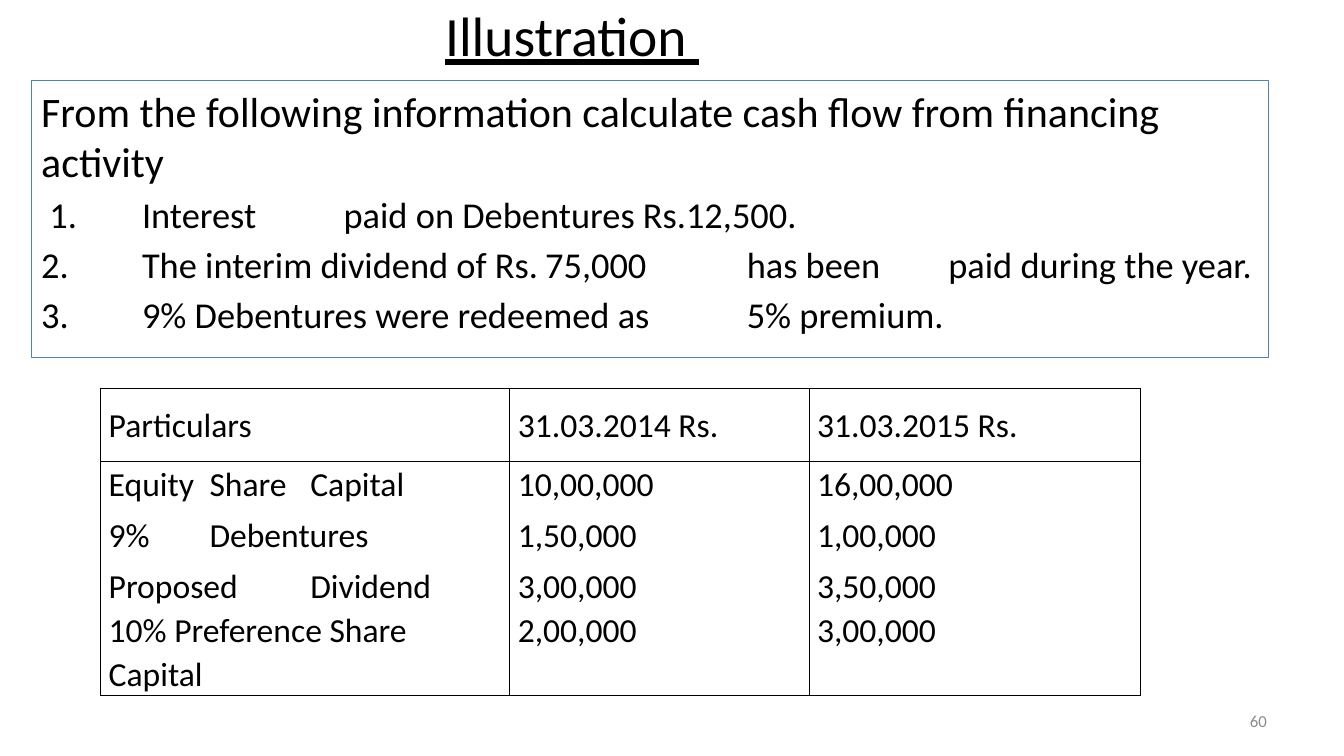
from lxml import etree
from pptx import Presentation
from pptx import util as u
from pptx.dml.color import RGBColor
from pptx.enum import shapes, text
from pptx.oxml import ns

COLORS = {"ink": "000000", "border": "4F81BD", "number": "8C8C8C"}
TAB = u.Cm(2.54)


class SlideBuilder:
    """Holds the style and the current slide."""
    font = "Calibri"

    def __init__(self, prs):
        self.s = prs.slides.add_slide(prs.slide_layouts[5])

    def color(self, name):
        return RGBColor.from_string(COLORS[name])

    def add_lines(self, tf, lines, color="ink", tabs=0, **para):
        """Fill a text frame; each line is (text, size, paragraph format)."""
        for i, (words, size, fmt) in enumerate(lines):
            p = tf.paragraphs[0] if i == 0 else tf.add_paragraph()
            for key, value in {**para, **fmt}.items():
                setattr(p, key, value)
            if tabs:
                tab_list = etree.SubElement(p._p.get_or_add_pPr(), ns.qn("a:tabLst"))
                for n in range(1, tabs + 1):
                    etree.SubElement(tab_list, ns.qn("a:tab"), pos=str(TAB * n), algn="l")
            r = p.add_run()
            r.text = words
            for key, value in {"name": self.font, "size": u.Pt(size)}.items():
                setattr(r.font, key, value)
            r.font.color.rgb = self.color(color)

    def frame(self, sp, anchor):
        tf = sp.text_frame
        for key, value in {"word_wrap": True, "vertical_anchor": anchor,
                           "auto_size": text.MSO_AUTO_SIZE.NONE}.items():
            setattr(tf, key, value)
        return tf

    def title(self, words, size, *box):
        sp = self.s.shapes.title
        sp.left, sp.top, sp.width, sp.height = map(u.Cm, box)
        tf = self.frame(sp, text.MSO_ANCHOR.MIDDLE)
        self.add_lines(tf, [(words, size, {})], alignment=text.PP_ALIGN.CENTER)
        tf.paragraphs[0].runs[0].font.underline = True

    def panel(self, lines, *box):
        sp = self.s.shapes.add_shape(shapes.MSO_SHAPE.RECTANGLE, *map(u.Cm, box))
        sp.shadow.inherit = False
        sp.fill.background()
        sp.line.color.rgb = self.color("border")
        sp.line.width = u.Pt(0.75)
        self.add_lines(self.frame(sp, text.MSO_ANCHOR.TOP), lines, tabs=11,
                       alignment=text.PP_ALIGN.LEFT)

    def label(self, words, size, color, *box):
        sp = self.s.shapes.add_textbox(*map(u.Cm, box))
        self.add_lines(self.frame(sp, text.MSO_ANCHOR.MIDDLE), [(words, size, {})],
                       color, alignment=text.PP_ALIGN.RIGHT)

    def borders(self, cell):
        tcPr = cell._tc.get_or_add_tcPr()
        for i, side in enumerate(("lnL", "lnR", "lnT", "lnB")):
            ln = etree.Element(ns.qn(f"a:{side}"), w=str(u.Pt(1)))
            fill = etree.SubElement(ln, ns.qn("a:solidFill"))
            etree.SubElement(fill, ns.qn("a:srgbClr"), val=COLORS["ink"])
            tcPr.insert(i, ln)

    def table(self, rows, left, top, widths, heights, size):
        shape = self.s.shapes.add_table(
            len(rows), len(widths), u.Cm(left), u.Cm(top),
            u.Cm(sum(widths)), u.Cm(sum(heights)))
        table = shape.table
        table.first_row = table.horz_banding = False
        for column, width in zip(table.columns, widths):
            column.width = u.Cm(width)
        for row, height in zip(table.rows, heights):
            row.height = u.Cm(height)
        for i, row in enumerate(rows):
            for j, entries in enumerate(row):
                cell = table.cell(i, j)
                anchor = text.MSO_ANCHOR.TOP if i else text.MSO_ANCHOR.MIDDLE
                for key, value in {"margin_left": u.Cm(0.2), "margin_right": u.Cm(0.2),
                                   "margin_top": 0, "margin_bottom": 0,
                                   "vertical_anchor": anchor}.items():
                    setattr(cell, key, value)
                cell.fill.background()
                self.borders(cell)
                # The first two body entries are set apart
                lines = [(entry, size, {"space_after": u.Pt(5.2 if i and n < 2 else 0)})
                         for n, entry in enumerate(entries)]
                self.add_lines(cell.text_frame, lines, tabs=3, line_spacing=1.07)


def main():
    prs = Presentation()
    prs.slide_width, prs.slide_height = u.Cm(33.87), u.Cm(19.05)
    slide = SlideBuilder(prs)

    # Problem statement
    points = [" 1.\tInterest\tpaid on Debentures Rs.12,500.",
              "2.\tThe interim dividend of Rs.\t75,000\thas been\tpaid during the year.",
              "3. \t9% Debentures were redeemed as\t5% premium."]
    question = "From the following information calculate cash flow from financing activity"
    slide.panel([(question, 30, {})]
                + [(point, 26, {"space_before": u.Pt(4.4)}) for point in points],
                0.79, 2.03, 31.17, 6.99)

    # Heading and slide number
    slide.title("Illustration ", 39.6, 0.74, 0, 27.36, 1.73)
    slide.label("60", 12, "number", 24.28, 17.65, 7.9, 1.02)

    # Balances at the two year ends
    balances = [
        (["Particulars"], ["31.03.2014 Rs."], ["31.03.2015 Rs."]),
        (["Equity\tShare\tCapital", "9%\tDebentures", "Proposed\tDividend",
          "10% Preference Share Capital"],
         ["10,00,000", "1,50,000", "3,00,000", "2,00,000"],
         ["16,00,000", "1,00,000", "3,50,000", "3,00,000"]),
    ]
    slide.table(balances, 2.54, 9.78, [10.31, 7.54, 8.36], [1.85, 5.74], 24)

    prs.save("out.pptx")


if __name__ == "__main__":
    main()
